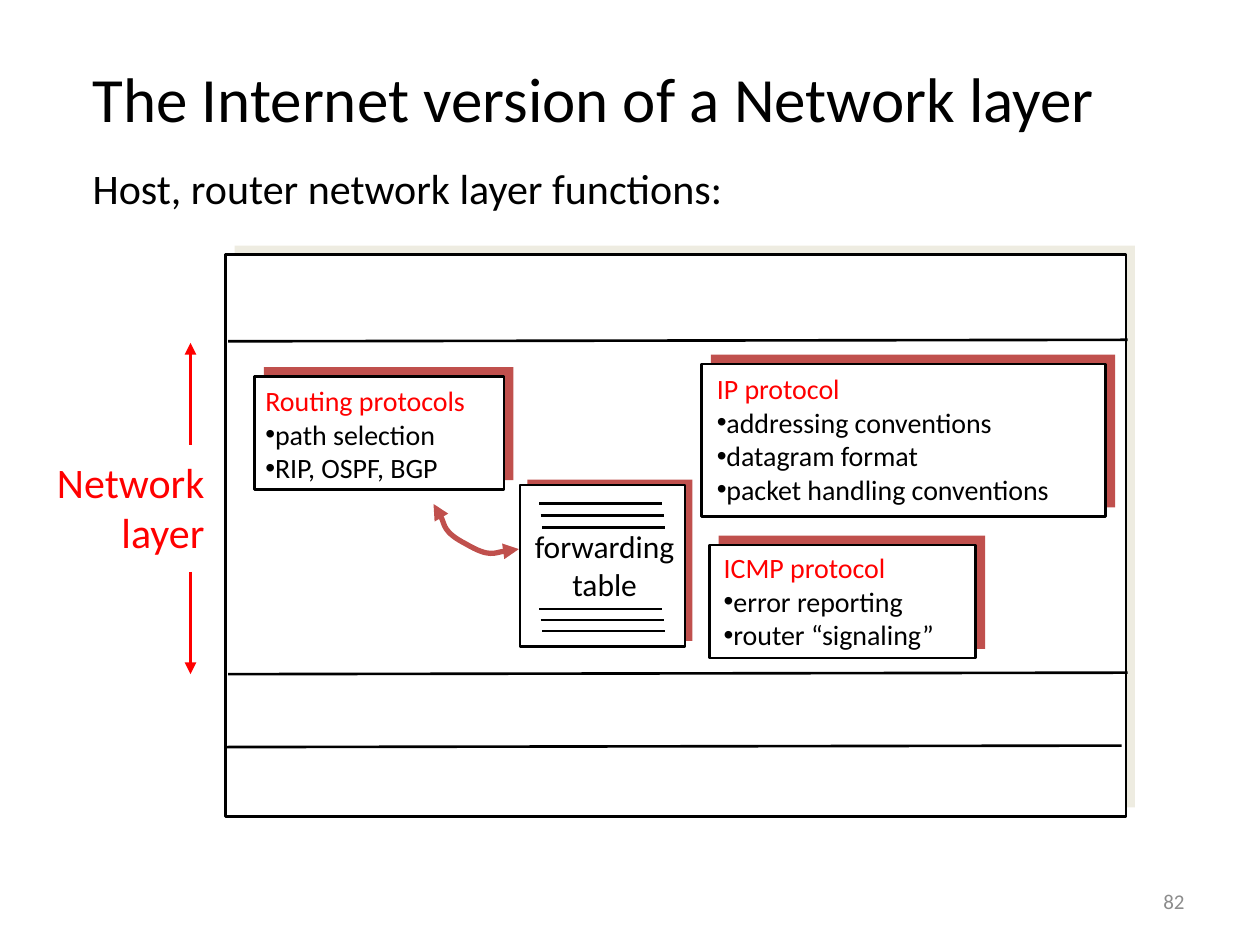
import dataclasses

import pptx
import pptx.dml.color
import pptx.enum.shapes
import pptx.enum.text
import pptx.oxml.ns
import pptx.util
from lxml import etree

Cm = pptx.util.Cm
Pt = pptx.util.Pt
RGB = pptx.dml.color.RGBColor.from_string
qn = pptx.oxml.ns.qn
ALIGN = pptx.enum.text.PP_ALIGN
ANCHOR = pptx.enum.text.MSO_ANCHOR
RECT = pptx.enum.shapes.MSO_SHAPE.RECTANGLE
STRAIGHT = pptx.enum.shapes.MSO_CONNECTOR.STRAIGHT


@dataclasses.dataclass(frozen=True)
class Theme:
    font: str = "Calibri"
    bullet_font: str = "Arial"
    black: str = "000000"
    white: str = "FFFFFF"
    red: str = "FF0000"
    brick: str = "C0504D"
    faint: str = "EEECE1"
    grey: str = "8C8C8C"
    title: int = 36
    lead: int = 24
    label: int = 18
    card: int = 16
    number: int = 12


theme = Theme()


def add_text(shapes, box, lines, size, color, align=ALIGN.LEFT, anchor=ANCHOR.TOP, bullet_color=None):
    tf = shapes.add_textbox(*map(Cm, box)).text_frame
    tf.word_wrap = True
    tf.vertical_anchor = anchor
    for i, line in enumerate(lines):
        p = tf.paragraphs[0] if i == 0 else tf.add_paragraph()
        p.alignment = align
        bulleted = bullet_color and i > 0
        if bulleted:
            pPr = p._p.get_or_add_pPr()
            etree.SubElement(pPr, qn("a:buFont"), typeface=theme.bullet_font)
            etree.SubElement(pPr, qn("a:buChar"), char="•")
        r = p.add_run()
        r.text = line
        r.font.name = theme.font
        r.font.size = Pt(size)
        r.font.color.rgb = RGB(bullet_color if bulleted else color)


def add_line(shapes, x1, y1, x2, y2, color=theme.black, width=1.5, arrow=False):
    sp = shapes.add_connector(STRAIGHT, Cm(x1), Cm(y1), Cm(x2), Cm(y2))
    sp.line.color.rgb = RGB(color)
    sp.line.width = Pt(width)
    if arrow:
        etree.SubElement(sp.line._get_or_add_ln(), qn("a:tailEnd"), type="triangle")
    etree.SubElement(sp._element.spPr, qn("a:effectLst"))


prs = pptx.Presentation()
prs.slide_width = Cm(25.4)
prs.slide_height = Cm(19.05)
s = prs.slides.add_slide(prs.slide_layouts[6])

add_text(s.shapes, (1.17, 0.38, 21.59, 3.18), ["The Internet version of a Network layer"],
         theme.title, theme.black, ALIGN.CENTER, ANCHOR.MIDDLE)
add_text(s.shapes, (1.62, 3.15, 20.93, 1.22), ["Host, router network layer functions:"],
         theme.lead, theme.black)

panels = {
    "stack": ((4.55, 5.13, 18.15, 11.33), (0.18, -0.18), theme.faint),
    "table": ((10.48, 9.78, 3.33, 3.25), (0.15, -0.11), theme.brick),
    "routing": ((5.13, 7.59, 5.03, 2.28), (0.19, -0.19), theme.brick),
    "ip": ((14.14, 7.34, 8.15, 3.08), (0.19, -0.19), theme.brick),
    "icmp": ((14.3, 10.99, 5.37, 2.28), (0.19, -0.19), theme.brick),
}
groups = {}
for name, ((x, y, w, h), (dx, dy), shade) in panels.items():
    shapes = s.shapes if name == "stack" else s.shapes.add_group_shape().shapes
    groups[name] = shapes
    for left, top, fill in ((x + dx, y + dy, shade), (x, y, theme.white)):
        sp = shapes.add_shape(RECT, Cm(left), Cm(top), Cm(w), Cm(h))
        sp.shadow.inherit = False
        sp.fill.solid()
        sp.fill.fore_color.rgb = RGB(fill)
        if fill == shade:
            sp.line.fill.background()
        else:
            sp.line.color.rgb = RGB(theme.black)
            sp.line.width = Pt(1.5)

for x1, y1, x2 in ((4.6, 6.88, 22.73), (4.6, 13.59, 22.73), (4.52, 15.06, 22.61)):
    add_line(s.shapes, x1, y1, x2, y1 - 0.03)

add_text(groups["table"], (10.31, 10.5, 3.76, 1.78), ["forwarding", "table"],
         theme.label, theme.black, ALIGN.CENTER)
for top, gap in ((10.15, 0.24), (12.28, 0.22)):
    for i in range(3):
        x, y = 10.87 + 0.03 * i, top + gap * i
        add_line(groups["table"], x, y, x + 2.48, y)

for name, box, lines in (
    ("routing", (5.1, 7.61, 5.08, 2.29), ["Routing protocols", "path selection", "RIP, OSPF, BGP"]),
    ("ip", (14.2, 7.37, 8.03, 2.97),
     ["IP protocol", "addressing conventions", "datagram format", "packet handling conventions"]),
    ("icmp", (14.34, 10.98, 5.28, 2.29), ["ICMP protocol", "error reporting", "router “signaling”"]),
):
    add_text(groups[name], box, lines, theme.card, theme.red, bullet_color=theme.black)

curve = ((8.74, 10.16), (8.86, 10.24), (8.92, 10.72), (9.4, 10.97),
         (9.88, 11.25), (10.26, 11.07), (10.46, 11.07))
start, *controls = [(Cm(x), Cm(y)) for x, y in curve]
builder = s.shapes.build_freeform(*start)
builder.add_line_segments(controls, close=False)
sp = builder.convert_to_shape()
segments = list(sp._element.iter(qn("a:lnTo")))
for i in range(0, len(segments), 3):
    first, second, third = segments[i:i + 3]
    first.tag = qn("a:cubicBezTo")
    for segment in (second, third):
        first.append(segment[0])
        segment.getparent().remove(segment)
sp.shadow.inherit = False
sp.fill.background()
sp.line.color.rgb = RGB(theme.brick)
sp.line.width = Pt(3)
for end in ("a:headEnd", "a:tailEnd"):
    etree.SubElement(sp.line._get_or_add_ln(), qn(end), type="triangle")

add_text(s.shapes, (0.43, 9.07, 3.94, 2.29), ["Network", "layer"], theme.lead, theme.red, ALIGN.RIGHT)
for start, end in ((8.97, 6.91), (11.53, 13.59)):
    add_line(s.shapes, 3.84, start, 3.84, end, theme.red, 2.25, arrow=True)

add_text(s.shapes, (18.21, 17.65, 5.92, 1.02), ["82"], theme.number, theme.grey, ALIGN.RIGHT, ANCHOR.MIDDLE)

prs.save("out.pptx")
